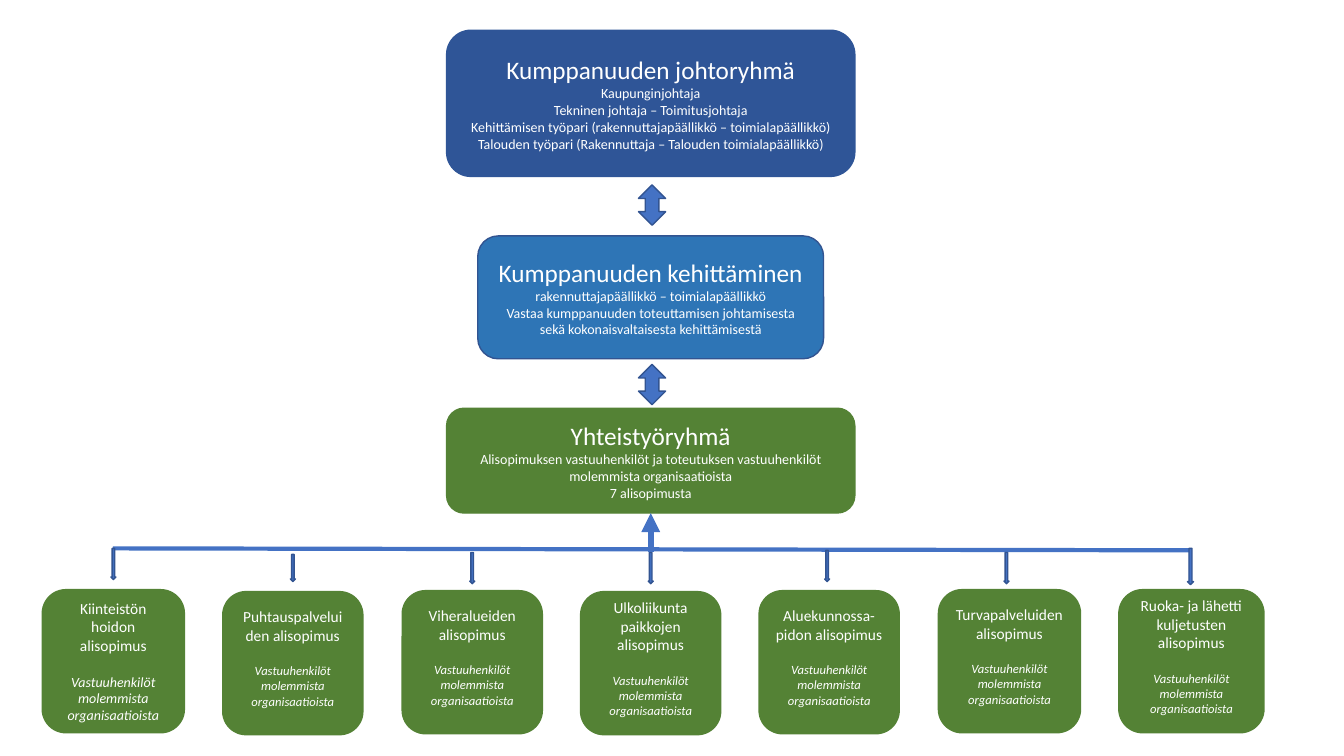
from dataclasses import dataclass

from lxml import etree
from pptx import Presentation
from pptx.dml.color import RGBColor
from pptx.enum.shapes import MSO_CONNECTOR, MSO_SHAPE
from pptx.enum.text import MSO_ANCHOR, PP_ALIGN
from pptx.oxml.ns import qn
from pptx.util import Pt


@dataclass(frozen=True)
class Theme:
    font: str = "Calibri"
    text: str = "FFFFFF"
    navy: str = "2F5597"
    blue: str = "2E75B6"
    green: str = "548235"
    arrow: str = "4472C4"
    outline: str = "325491"
    title: float = 18
    body: float = 10
    contract: float = 11
    note: float = 9


class Chart:
    """Draws organisation chart elements on one slide; lengths are in points."""

    def __init__(self, slide, theme):
        self.slide = slide
        self.theme = theme

    def shape(self, kind, x, y, w, h, fill, line):
        sp = self.slide.shapes.add_shape(kind, Pt(x), Pt(y), Pt(w), Pt(h))
        sp.shadow.inherit = False
        sp.fill.solid()
        sp.fill.fore_color.rgb = RGBColor.from_string(fill)
        sp.line.color.rgb = RGBColor.from_string(line)
        sp.line.width = Pt(1)
        return sp

    def box(self, x, y, w, h, fill, paragraphs, line=None):
        """Paragraphs are (text, size, italic, space before) tuples."""
        sp = self.shape(MSO_SHAPE.ROUNDED_RECTANGLE, x, y, w, h, fill, line or fill)
        tf = sp.text_frame
        tf.word_wrap = True
        tf.vertical_anchor = MSO_ANCHOR.MIDDLE
        for i, (text, size, italic, gap) in enumerate(paragraphs):
            p = tf.add_paragraph() if i else tf.paragraphs[0]
            p.text = text
            p.alignment = PP_ALIGN.CENTER
            p.space_before = Pt(gap)
            font = p.runs[0].font
            font.name = self.theme.font
            font.size = Pt(size)
            font.italic = italic
            font.color.rgb = RGBColor.from_string(self.theme.text)
        return sp

    def group_box(self, x, y, w, h, fill, title, body, line=None):
        paragraphs = [(title, self.theme.title, False, 0)]
        paragraphs += [(text, self.theme.body, False, 0) for text in body]
        return self.box(x, y, w, h, fill, paragraphs, line)

    def contract_box(self, x, y, w, h, titles, note_size, bottom):
        paragraphs = [(text, self.theme.contract, False, 0) for text in titles]
        paragraphs.append((NOTE, note_size, True, 13.4))
        sp = self.box(x, y, w, h, self.theme.green, paragraphs)
        sp.text_frame.margin_bottom = Pt(bottom)

    def arrow(self, kind, x, y, w, h):
        return self.shape(kind, x, y, w, h, self.theme.arrow, self.theme.outline)

    def line(self, x1, y1, x2, y2, width, head=False):
        c = self.slide.shapes.add_connector(
            MSO_CONNECTOR.STRAIGHT, Pt(x1), Pt(y1), Pt(x2), Pt(y2))
        c.line.color.rgb = RGBColor.from_string(self.theme.arrow)
        c.line.width = Pt(width)
        if head:
            etree.SubElement(c.line._get_or_add_ln(), qn("a:tailEnd"), type="triangle")
        etree.SubElement(c._element.spPr, qn("a:effectLst"))
        return c


NOTE = "Vastuuhenkilöt molemmista organisaatioista"
BOX_HEIGHT = 102.2

# box left, top, width, title paragraphs
CONTRACTS = [
    (30.2, 421.2, 101.5, ["Kiinteistön", "hoidon alisopimus"]),
    (159.1, 422.6, 100.1, ["Puhtauspalveluiden alisopimus"]),
    (287.3, 421.9, 100.1, ["Viheralueiden alisopimus"]),
    (414.7, 422.6, 100.1, ["Ulkoliikunta", "paikkojen alisopimus"]),
    (542.2, 421.9, 100.1, ["Aluekunnossa-pidon alisopimus"]),
    (670.3, 421.2, 101.5, ["Turvapalveluiden alisopimus"]),
    (799.2, 421.2, 103.7, ["Ruoka- ja lähetti kuljetusten alisopimus"]),
]

# left, top, width, height
DOWN_ARROWS = [
    (79.2, 391.7, 3.6, 22.3),
    (207.4, 396, 3.6, 19.4),
    (335.5, 394.6, 3.6, 22.3),
    (463, 394.6, 3.6, 22.3),
    (589, 393.1, 3.6, 22.3),
    (717.1, 394.6, 3.6, 22.3),
    (848.2, 391.7, 4.3, 25.9),
]


def main():
    prs = Presentation()
    prs.slide_width, prs.slide_height = Pt(960), Pt(540)
    theme = Theme()
    chart = Chart(prs.slides.add_slide(prs.slide_layouts[6]), theme)

    chart.group_box(319, 21.6, 291.6, 104.4, theme.navy, "Kumppanuuden johtoryhmä", [
        "Kaupunginjohtaja",
        "Tekninen johtaja – Toimitusjohtaja",
        "Kehittämisen työpari (rakennuttajapäällikkö – toimialapäällikkö)",
        "Talouden työpari (Rakennuttaja – Talouden toimialapäällikkö)",
    ])
    chart.group_box(341.3, 168.5, 247, 87.8, theme.blue, "Kumppanuuden kehittäminen", [
        "rakennuttajapäällikkö – toimialapäällikkö",
        "Vastaa kumppanuuden toteuttamisen johtamisesta sekä kokonaisvaltaisesta kehittämisestä",
    ], theme.outline)
    team = chart.group_box(319, 291.6, 291.6, 74.9, theme.green, "Yhteistyöryhmä", [
        "Alisopimuksen vastuuhenkilöt ja toteutuksen vastuuhenkilöt",
        "molemmista organisaatioista",
        "7 alisopimusta",
    ])

    for i, (x, y, w, titles) in enumerate(CONTRACTS):
        note_size, bottom = (theme.note, 10.9) if i else (theme.body, 3.6)
        chart.contract_box(x, y, w, BOX_HEIGHT, titles, note_size, bottom)

    chart.line(80.6, 391.7, 850.3, 393.1, 3)
    for place in DOWN_ARROWS:
        chart.arrow(MSO_SHAPE.DOWN_ARROW, *place)
    for y in (132.1, 260.3):
        chart.arrow(MSO_SHAPE.UP_DOWN_ARROW, 456.1, y, 19.4, 28.8)
    chart.line(464.8, 394.6, 464.8, 366.5, 4.5, head=True).end_connect(team, 2)

    prs.save("out.pptx")


if __name__ == "__main__":
    main()
